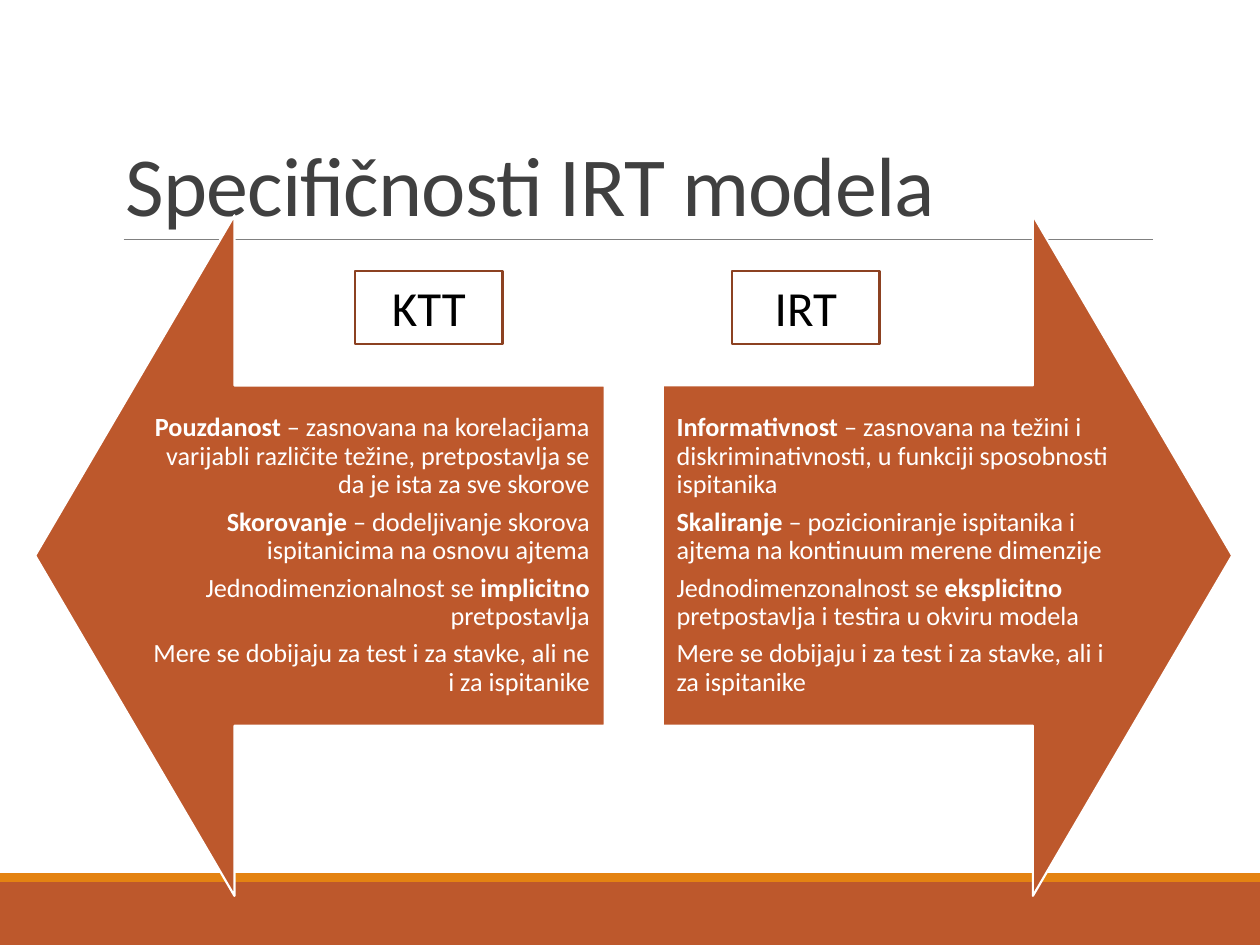
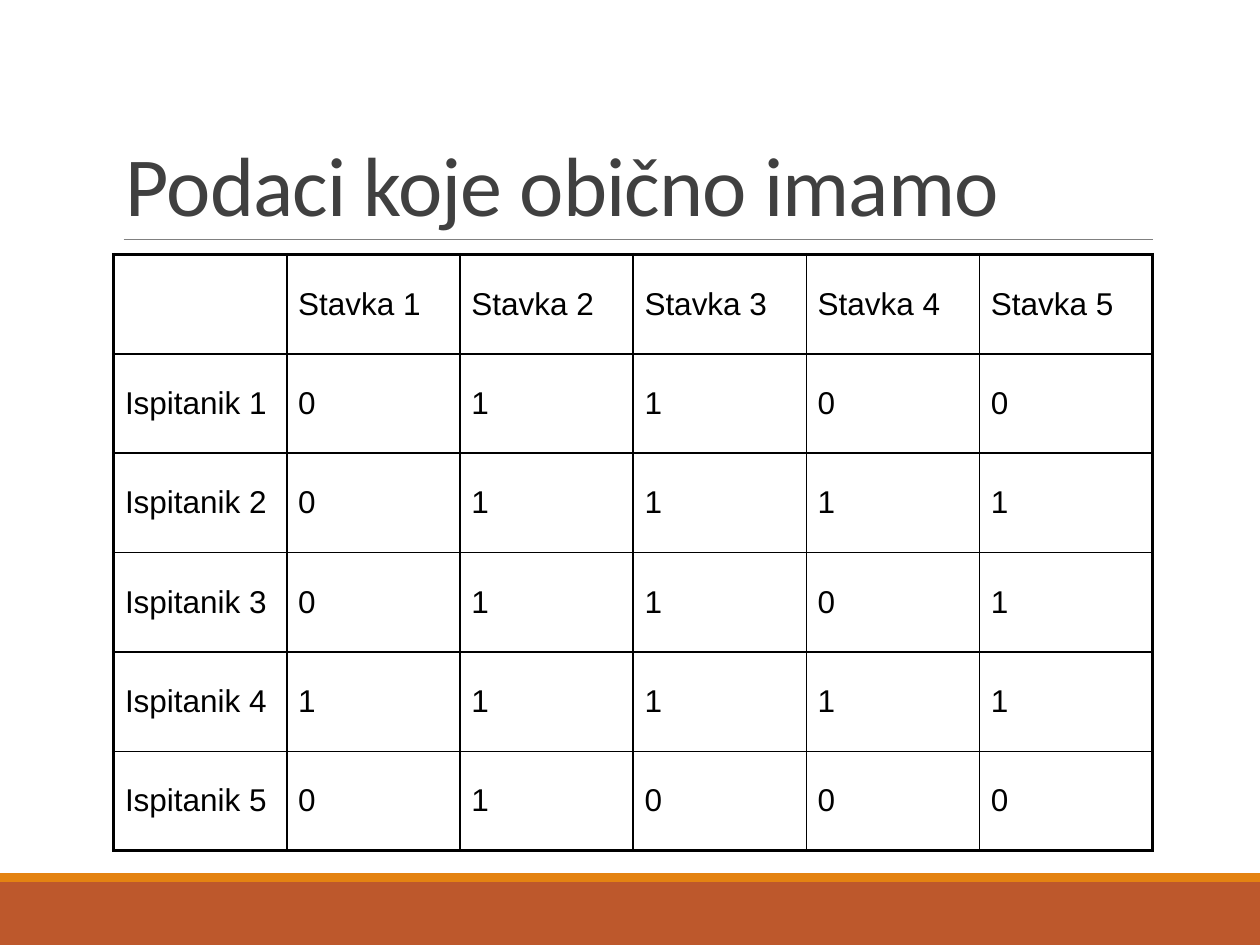
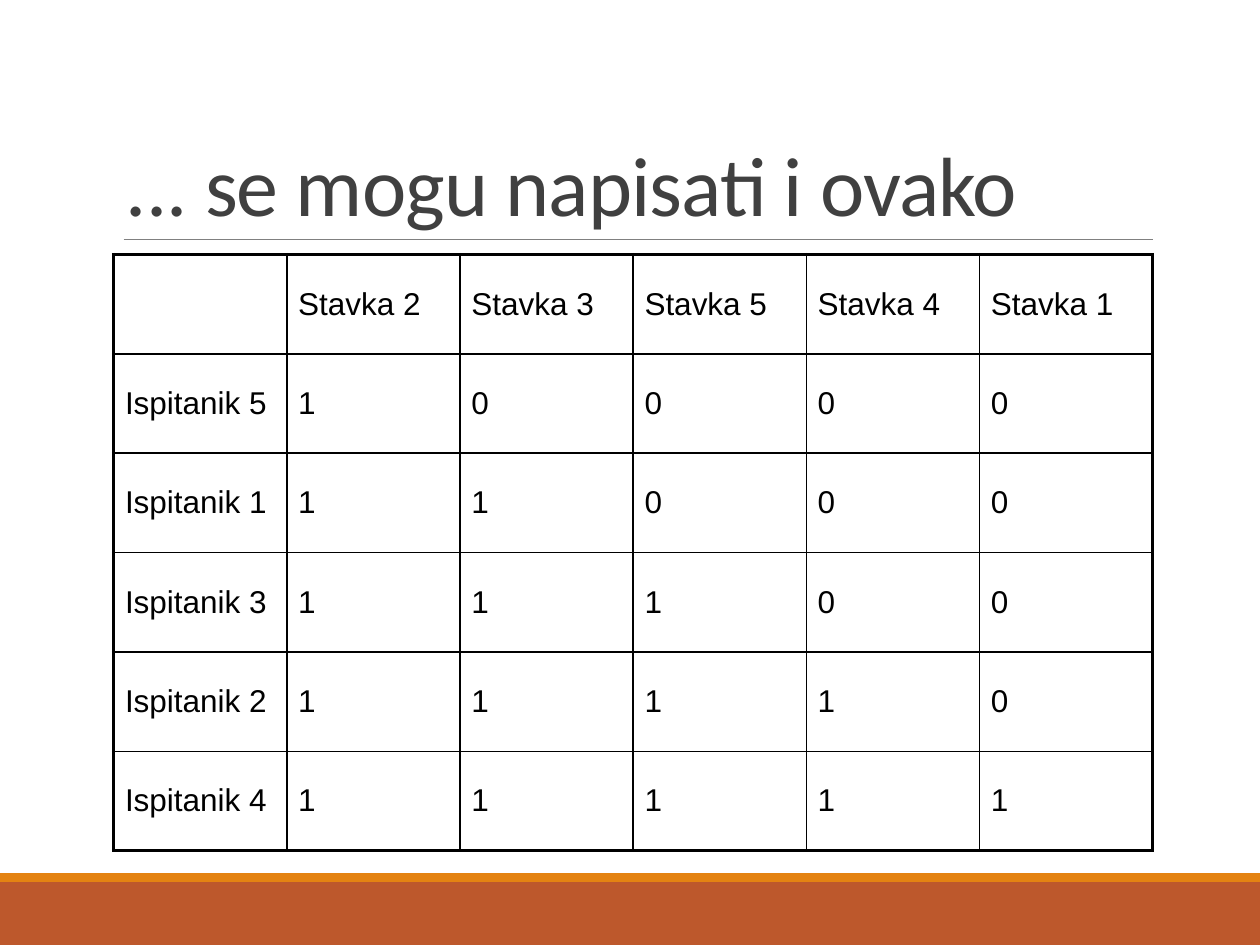
import pptx
import pptx.dml.color
import pptx.enum.shapes
import pptx.enum.text
import pptx.oxml
import pptx.oxml.ns
import pptx.util

Cm = pptx.util.Cm
Pt = pptx.util.Pt
RGB = pptx.dml.color.RGBColor
Kind = pptx.enum.shapes.MSO_SHAPE
Align = pptx.enum.text.PP_ALIGN
Anchor = pptx.enum.text.MSO_ANCHOR

RUST = RGB(0xBD, 0x58, 0x2C)
AMBER = RGB(0xE4, 0x83, 0x12)
BROWN = RGB(0x8C, 0x41, 0x21)
DARK = RGB(0x40, 0x40, 0x40)
GREY = RGB(0x80, 0x80, 0x80)
BLACK = RGB(0, 0, 0)
WHITE = RGB(255, 255, 255)

WIDE, HIGH = 25.4, 19.05

# Text between asterisks is bold
KTT = [
    "*Pouzdanost* – zasnovana na korelacijama varijabli različite težine, "
    "pretpostavlja se da je ista za sve skorove",
    "*Skorovanje* – dodeljivanje skorova ispitanicima na osnovu ajtema",
    "Jednodimenzionalnost se *implicitno* pretpostavlja",
    "Mere se dobijaju za test i za stavke, ali ne i za ispitanike",
]
IRT = [
    "*Informativnost* – zasnovana na težini i diskriminativnosti, "
    "u funkciji sposobnosti ispitanika",
    "*Skaliranje* – pozicioniranje ispitanika i ajtema na kontinuum "
    "merene dimenzije",
    "Jednodimenzonalnost se *eksplicitno* pretpostavlja i testira "
    "u okviru modela",
    "Mere se dobijaju i za test i za stavke, ali i za ispitanike",
]

# Answers by person, one digit for each item
SCORES = {1: "01100", 2: "01111", 3: "01101", 4: "11111", 5: "01000"}


class Deck:
    def __init__(self):
        self.prs = pptx.Presentation()
        self.prs.slide_width, self.prs.slide_height = Cm(WIDE), Cm(HIGH)
        self.slide = None

    def start(self, title):
        """Add a slide with its bands, rule and title."""
        self.slide = self.prs.slides.add_slide(self.prs.slide_layouts[6])
        self.shape(Kind.RECTANGLE, (0, 17.78, WIDE, 1.27), fill=RUST)
        self.shape(Kind.RECTANGLE, (0, 17.6, WIDE, 0.18), fill=AMBER)
        self.rule(2.49, 23.24, 4.83)
        frame = self.text((2.29, 0.79, 20.95, 4.04), Anchor.BOTTOM)
        frame.text = title
        para = frame.paragraphs[0]
        para.line_spacing = 0.85
        self.style(para, 48, DARK)
        para.runs[0]._r.get_or_add_rPr().set("spc", "-50")

    def style(self, para, size, color, face="Calibri"):
        for run in para.runs:
            run.font.name, run.font.size = face, Pt(size)
            run.font.color.rgb = color

    def shape(self, kind, box, fill=None, line=None):
        item = self.slide.shapes.add_shape(kind, *map(Cm, box))
        item.shadow.inherit = False
        if fill is None:
            item.fill.background()
        else:
            item.fill.solid()
            item.fill.fore_color.rgb = fill
        if line is None:
            item.line.fill.background()
        else:
            item.line.color.rgb = line
            item.line.width = Pt(1.25)
        return item

    def rule(self, left, right, top):
        line = self.slide.shapes.add_connector(
            pptx.enum.shapes.MSO_CONNECTOR.STRAIGHT,
            Cm(left), Cm(top), Cm(right), Cm(top))
        line.line.color.rgb = GREY
        line.line.width = Pt(0.5)
        props = line._element.spPr
        props.append(pptx.oxml.parse_xml(
            f'<a:effectLst {pptx.oxml.ns.nsdecls("a")}/>'))

    def text(self, box, anchor):
        frame = self.slide.shapes.add_textbox(*map(Cm, box)).text_frame
        frame.word_wrap = True
        frame.vertical_anchor = anchor
        return frame

    def arrow(self, left, turn):
        item = self.shape(Kind.UP_ARROW, (left, 5.46, 13.72, 11.48),
                          RUST, WHITE)
        item.adjustments[0], item.adjustments[1] = 0.5, 0.35
        item.rotation = turn

    def points(self, left, lines, align):
        frame = self.text((left, 7.77, 9.47, 6.86), Anchor.MIDDLE)
        frame.margin_left = frame.margin_right = Cm(0.3)
        frame.margin_top = frame.margin_bottom = Cm(0.3)
        for row, line in enumerate(lines):
            para = frame.add_paragraph() if row else frame.paragraphs[0]
            para.alignment = align
            para.line_spacing = 0.9
            para.space_after = Pt(5.25)
            for part, words in enumerate(line.split("*")):
                if words:
                    run = para.add_run()
                    run.text = words
                    run.font.bold = part % 2 == 1
            self.style(para, 15, WHITE)

    def label(self, left, words):
        item = self.shape(Kind.RECTANGLE, (left, 5.46, 2.97, 1.47),
                          line=BROWN)
        frame = item.text_frame
        frame.text = words
        frame.vertical_anchor = Anchor.MIDDLE
        frame.paragraphs[0].alignment = Align.CENTER
        self.style(frame.paragraphs[0], 28, BLACK)

    def border(self, cell, side, width):
        cell._tc.get_or_add_tcPr().append(pptx.oxml.parse_xml(
            f'<a:ln{side} {pptx.oxml.ns.nsdecls("a")} w="{Pt(width)}">'
            f'<a:solidFill><a:srgbClr val="{BLACK}"/></a:solidFill>'
            f'</a:ln{side}>'))

    def grid(self, rows):
        tall, broad = len(rows), len(rows[0])
        table = self.slide.shapes.add_table(
            tall, broad, Cm(2.29), Cm(5.13), Cm(20.95), Cm(12.02)).table
        table.first_row = table.horz_banding = False
        for r, row in enumerate(rows):
            for c, words in enumerate(row):
                cell = table.cell(r, c)
                cell.text = words
                cell.vertical_anchor = Anchor.MIDDLE
                cell.margin_left = cell.margin_right = Cm(0.23)
                self.style(cell.text_frame.paragraphs[0], 18, BLACK, "Arial")
                # Thick lines on the outer edge only
                edges = {"L": c == 0, "R": c == broad - 1,
                         "T": r == 0, "B": r == tall - 1}
                for side, outer in edges.items():
                    self.border(cell, side, 2.25 if outer else 1)
                cell.fill.background()


def matrix(people, items):
    """Lay out the scores in the given order of people and items."""
    head = [""] + [f"Stavka {i}" for i in items]
    return [head] + [[f"Ispitanik {p}"] + [SCORES[p][i - 1] for i in items]
                     for p in people]


def main():
    deck = Deck()

    # Two models side by side
    deck.start("Specifičnosti IRT modela")
    deck.arrow(-0.41, 270)
    deck.points(2.72, KTT, Align.RIGHT)
    deck.arrow(12.24, 90)
    deck.points(13.34, IRT, Align.LEFT)
    deck.label(7.16, "KTT")
    deck.label(14.76, "IRT")

    # Raw data
    deck.start("Podaci koje obično imamo")
    deck.grid(matrix(range(1, 6), range(1, 6)))

    # People from low to high, items from easy to hard
    deck.start("... se mogu napisati i ovako")
    people = sorted(SCORES, key=lambda p: SCORES[p].count("1"))
    items = sorted(range(1, 6), reverse=True,
                   key=lambda i: sum(s[i - 1] == "1" for s in SCORES.values()))
    deck.grid(matrix(people, items))

    deck.prs.save("out.pptx")


if __name__ == "__main__":
    main()
